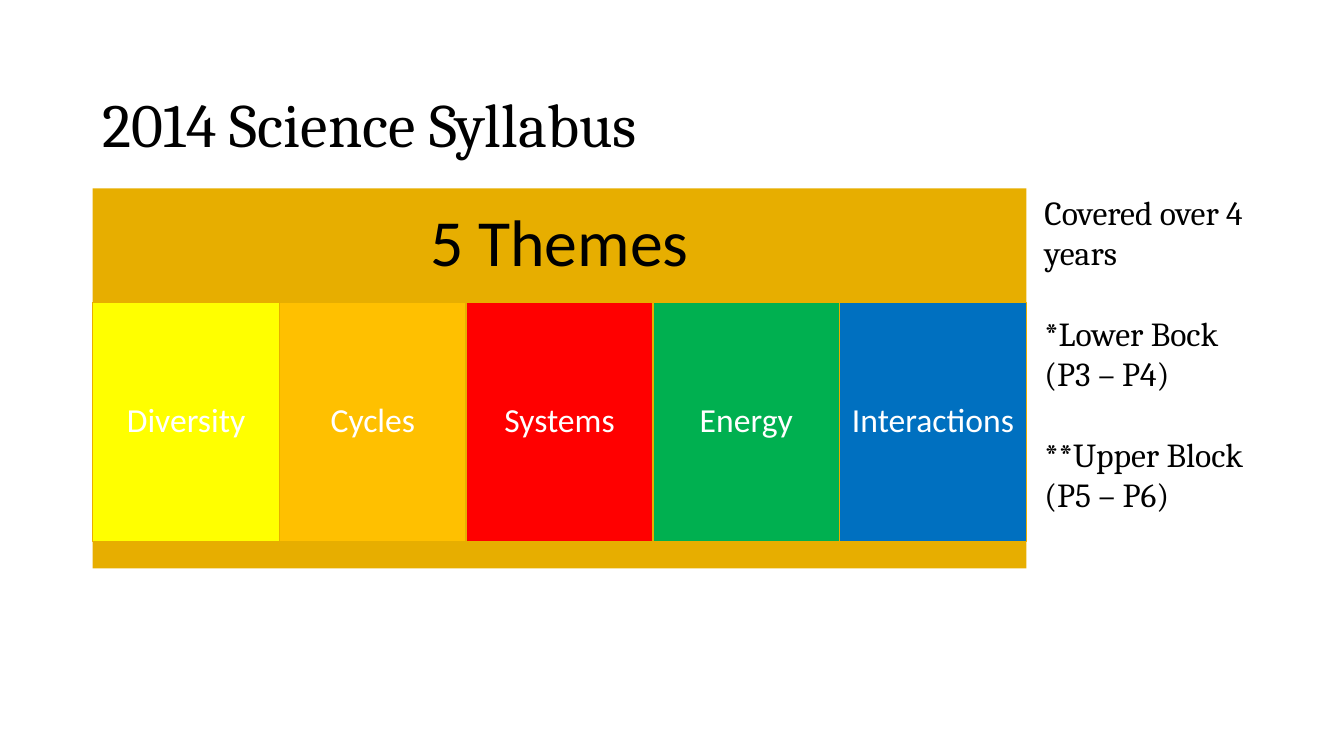
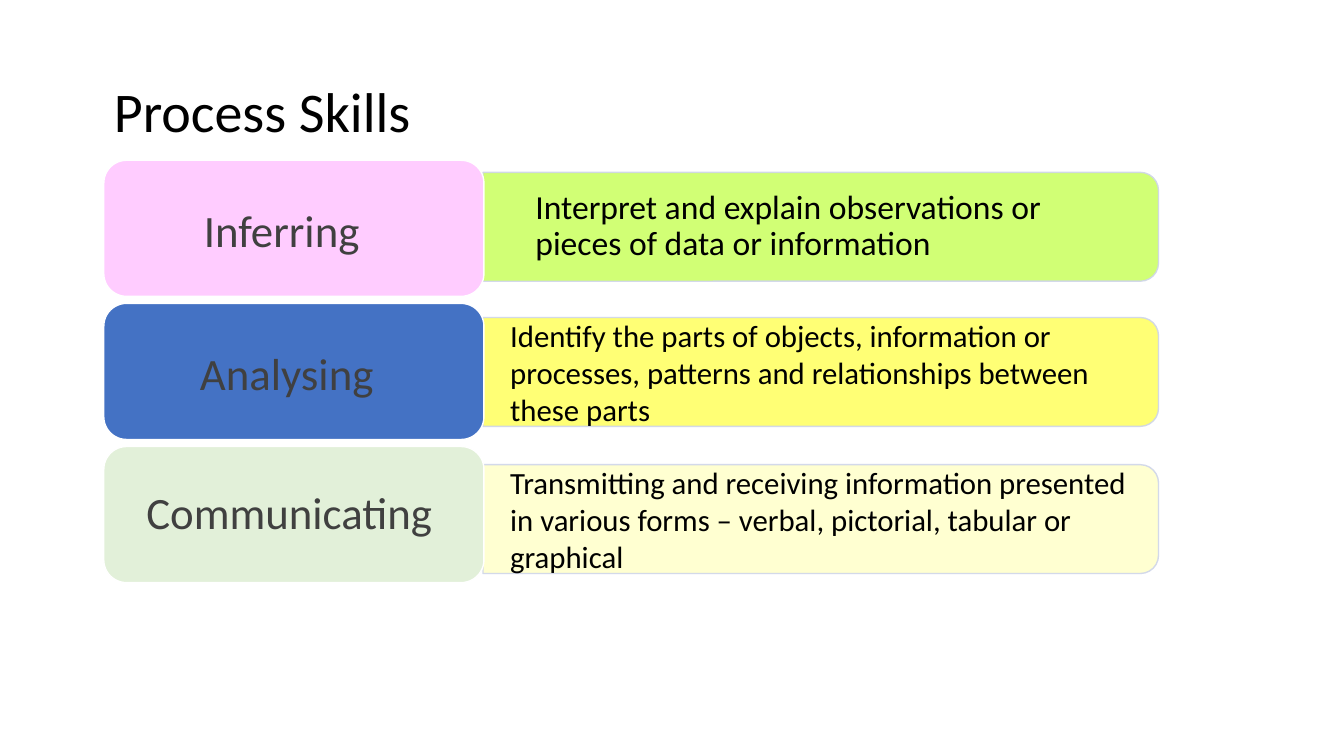
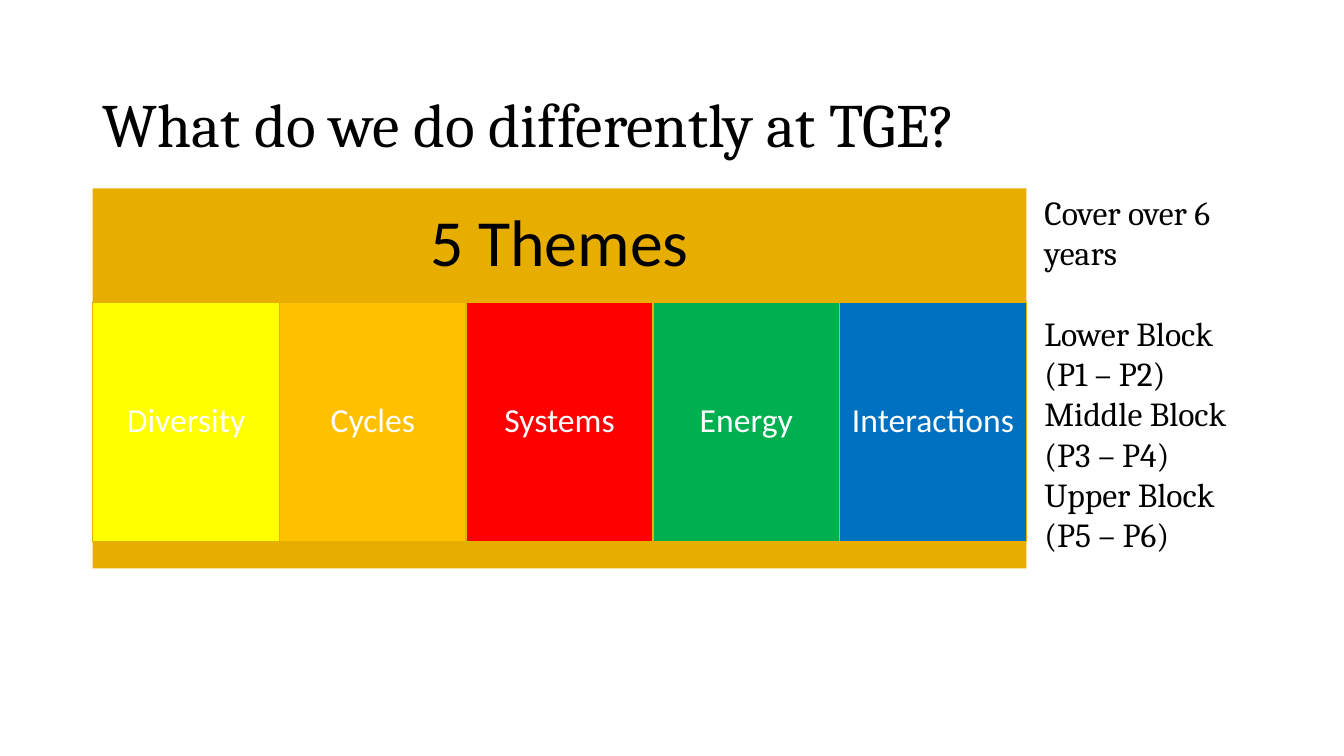
"""Build three slides on the science syllabus, its themes and process skills."""
from dataclasses import dataclass

from lxml.etree import SubElement
from pptx import Presentation
from pptx.dml.color import RGBColor
from pptx.enum.shapes import MSO_SHAPE
from pptx.enum.text import MSO_ANCHOR, MSO_AUTO_SIZE, PP_ALIGN
from pptx.oxml.ns import qn
from pptx.util import Inches, Pt


@dataclass(frozen=True)
class Theme:
    sans: str = "Calibri"
    serif: str = "Cambria"
    black: str = "000000"
    white: str = "FFFFFF"
    gold: str = "E7AE00"
    label_text: str = "404040"
    bar_line: str = "CFD5EA"
    title_size: int = 44
    small_title_size: int = 40
    header_size: int = 47
    label_size: int = 32
    body_size: int = 24
    detail_size: int = 22
    tight: float = 0.9


THEME = Theme()

THEMES_HEADER = "5 Themes"
THEMES = [
    ("Diversity", "FFFF00"),
    ("Cycles", "FFC000"),
    ("Systems", "FF0000"),
    ("Energy", "00B050"),
    ("Interactions", "0070C0"),
]

SYLLABUS = {
    "title": "2014 Science Syllabus",
    "notes": ["Covered over 4 years", "*Lower Bock (P3 – P4)", "**Upper Block (P5 – P6)"],
    "gaps": (1, 2),
    "height": 3.33,
}
DIFFERENCE = {
    "title": "What do we do differently at TGE?",
    "notes": ["Cover over 6 years", "Lower Block (P1 – P2)", "Middle Block", "(P3 – P4)",
              "Upper Block (P5 – P6)"],
    "gaps": (1,),
    "height": 3.74,
}

SKILLS_TITLE = "Process Skills"
SKILLS = [
    {"name": "Inferring", "fill": "FFCCFF", "label_insets": (0.13, 0.17, 0.37, 0.07),
     "detail": "Interpret and explain observations or pieces of data or information",
     "bar_fill": "CCFF66", "bar_top": 1.71, "size": THEME.body_size,
     "spacing": THEME.tight, "detail_insets": (0.52, 0, 0.6, 0)},
    {"name": "Analysing", "fill": "4472C4", "label_insets": (0.13, 0.17, 0.27, 0.07),
     "detail": "Identify the parts of objects, information or processes, "
               "patterns and relationships between these parts",
     "bar_fill": "FFFF66", "bar_top": 3.15, "size": THEME.detail_size,
     "spacing": 1.0, "detail_insets": (0.27, 0, 0.2, 0)},
    {"name": "Communicating", "fill": "E2F0D9", "label_insets": (0.13, 0.07, 0.22, 0.07),
     "detail": "Transmitting and receiving information presented in various forms "
               "– verbal, pictorial, tabular or graphical",
     "bar_fill": "FFFFCC", "bar_top": 4.61, "size": THEME.detail_size,
     "spacing": 1.0, "detail_insets": (0.27, 0, 0.2, 0)},
]


def write(box, lines, *, size, font=THEME.sans, color=THEME.black, align=PP_ALIGN.LEFT,
          anchor=MSO_ANCHOR.MIDDLE, spacing=THEME.tight, insets=(0.1, 0.05, 0.1, 0.05),
          gaps=(), gap=29):
    frame = box.text_frame
    frame.word_wrap = True
    frame.auto_size = MSO_AUTO_SIZE.NONE
    frame.vertical_anchor = anchor
    (frame.margin_left, frame.margin_top,
     frame.margin_right, frame.margin_bottom) = map(Inches, insets)
    for index, line in enumerate(lines):
        para = frame.paragraphs[0] if index == 0 else frame.add_paragraph()
        para.alignment = align
        para.line_spacing = spacing
        para.space_before = Pt(gap if index in gaps else 0)
        span = para.add_run()
        span.text = line
        span.font.size = Pt(size)
        span.font.name = font
        span.font.color.rgb = RGBColor.from_string(color)


def add_box(page, kind, left, top, width, height, *, fill, line=None, opacity=100):
    box = page.shapes.add_shape(kind, *map(Inches, (left, top, width, height)))
    box.shadow.inherit = False
    box.fill.solid()
    box.fill.fore_color.rgb = RGBColor.from_string(fill)
    if line:
        box.line.color.rgb = RGBColor.from_string(line)
        box.line.width = Pt(1)
    else:
        box.line.fill.background()
    if opacity < 100:
        for color in box._element.spPr.iter(qn("a:srgbClr")):
            SubElement(color, qn("a:alpha")).set("val", str(opacity * 1000))
    return box


def add_text(page, lines, left, top, width, height, **text_format):
    box = page.shapes.add_textbox(*map(Inches, (left, top, width, height)))
    write(box, lines, **text_format)


def add_page(deck, title, left, top, width, height, **text_format):
    page = deck.slides.add_slide(deck.slide_layouts.get_by_name("Title Only"))
    box = page.shapes.title
    box.left, box.top, box.width, box.height = map(Inches, (left, top, width, height))
    write(box, [title], **text_format)
    return page


def build_themes(deck, content):
    left, width, block_top, block_height = 0.92, 9.26, 3.0, 2.37
    page = add_page(deck, content["title"], left, 0.69, 11.5, 1.16,
                    size=THEME.title_size, font=THEME.serif)
    header = add_box(page, MSO_SHAPE.RECTANGLE, left, 1.87, width, 1.13, fill=THEME.gold)
    write(header, [THEMES_HEADER], size=THEME.header_size, align=PP_ALIGN.CENTER,
          insets=(0.2,) * 4)
    block_width = width / len(THEMES)
    for index, (name, fill) in enumerate(THEMES):
        block = add_box(page, MSO_SHAPE.RECTANGLE, left + index * block_width, block_top,
                        block_width, block_height, fill=fill, line=THEME.gold)
        write(block, [name], size=THEME.body_size, color=THEME.white,
              align=PP_ALIGN.CENTER, insets=(0.1,) * 4)
    add_box(page, MSO_SHAPE.RECTANGLE, left, block_top + block_height, width, 0.27,
            fill=THEME.gold)
    add_text(page, content["notes"], 10.26, 1.85, 2.28, content["height"],
             size=THEME.body_size, font=THEME.serif, anchor=MSO_ANCHOR.TOP,
             spacing=1.0, gaps=content["gaps"])


def build_skills(deck):
    left, top, pitch = 1.03, 1.59, 1.42
    label_width, label_height = 3.77, 1.35
    bar_left, bar_width, bar_height = 4.79, 6.7, 1.08
    turn = (bar_width - bar_height) / 2
    page = add_page(deck, SKILLS_TITLE, left, 0.6, 6.67, 1.07, size=THEME.small_title_size)
    for index, skill in enumerate(SKILLS):
        bar = add_box(page, MSO_SHAPE.ROUND_2_SAME_RECTANGLE, bar_left + turn,
                      skill["bar_top"] - turn, bar_height, bar_width,
                      fill=skill["bar_fill"], line=THEME.bar_line, opacity=90)
        bar.rotation = 90
        add_text(page, [skill["detail"]], bar_left, skill["bar_top"], 6.65, bar_height,
                 size=skill["size"], spacing=skill["spacing"], insets=skill["detail_insets"])
        label = add_box(page, MSO_SHAPE.ROUNDED_RECTANGLE, left, top + index * pitch,
                        label_width, label_height, fill=skill["fill"], line=THEME.white)
        write(label, [skill["name"]], size=THEME.label_size, color=THEME.label_text,
              align=PP_ALIGN.CENTER, insets=skill["label_insets"])


def main():
    deck = Presentation()
    deck.slide_width, deck.slide_height = Inches(13.33), Inches(7.5)
    build_themes(deck, SYLLABUS)
    build_skills(deck)
    build_themes(deck, DIFFERENCE)
    deck.save("out.pptx")


if __name__ == "__main__":
    main()
